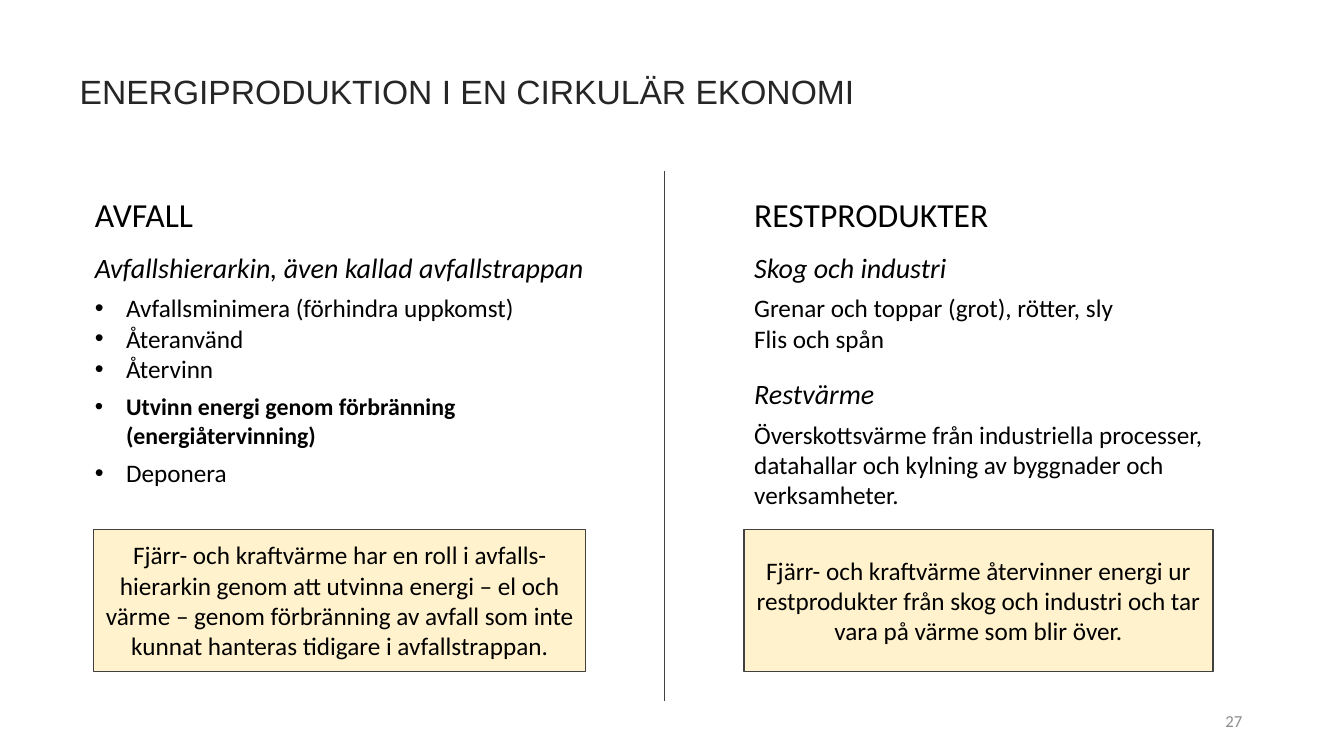
import pptx
import pptx.util
import pptx.dml.color
import pptx.enum.shapes
import pptx.enum.text
import pptx.oxml
import pptx.oxml.ns

Inches = pptx.util.Inches
Pt = pptx.util.Pt
RGBColor = pptx.dml.color.RGBColor
Align = pptx.enum.text.PP_ALIGN
Anchor = pptx.enum.text.MSO_ANCHOR

BLACK = RGBColor(0, 0, 0)
DARK = RGBColor(0x26, 0x26, 0x26)
EDGE = RGBColor(0x40, 0x40, 0x40)
GRAY = RGBColor(0x8C, 0x8C, 0x8C)
CREAM = RGBColor(0xFF, 0xF2, 0xCC)

# Text formats by level
HEAD = dict(size=24)
SUB = dict(size=20, italic=True, before=12)
ITEM = dict(bullet=True)

WASTE = [
    ("AVFALL", HEAD),
    ("Avfallshierarkin, även kallad avfallstrappan", SUB),
    ("Avfallsminimera (förhindra uppkomst)", dict(ITEM, before=6)),
    ("Återanvänd", ITEM),
    ("Återvinn", ITEM),
    ("Utvinn energi genom förbränning (energiåtervinning)",
     dict(ITEM, size=17, bold=True, before=6, after=6)),
    ("Deponera", ITEM),
]
REST = [
    ("RESTPRODUKTER", HEAD),
    ("Skog och industri", SUB),
    ("Grenar och toppar (grot), rötter, sly", dict(before=6)),
    ("Flis och spån", {}),
    ("Restvärme", dict(SUB, before=17)),
    ("Överskottsvärme från industriella processer, datahallar och kylning "
     "av byggnader och verksamheter.", dict(before=6)),
]
WASTE_NOTE = ("Fjärr- och kraftvärme har en roll i avfalls-hierarkin genom att "
              "utvinna energi – el och värme – genom förbränning av avfall som "
              "inte kunnat hanteras tidigare i avfallstrappan.")
REST_NOTE = ("Fjärr- och kraftvärme återvinner energi ur restprodukter från "
             "skog och industri och tar vara på värme som blir över.")


def add_xml(parent, tag, **attrs):
    node = pptx.oxml.parse_xml(
        f'<a:{tag} {pptx.oxml.ns.nsdecls("a")}/>')
    for key, value in attrs.items():
        node.set(key, value)
    parent.append(node)


def write(para, text, size=18, font="Calibri", color=BLACK, bold=False,
          italic=False, align=Align.LEFT, before=0, after=0, bullet=False):
    props = para._p.get_or_add_pPr()
    indent = Inches(0.31) if bullet else 0
    props.set("marL", str(indent))
    props.set("indent", str(-indent))
    if bullet:
        add_xml(props, "buFont", typeface="Arial")
        add_xml(props, "buChar", char="•")
    else:
        add_xml(props, "buNone")
    para.alignment = align
    para.space_before, para.space_after = Pt(before), Pt(after)
    run = para.add_run()
    run.text = text
    run.font.size, run.font.name = Pt(size), font
    run.font.bold, run.font.italic = bold, italic
    run.font.color.rgb = color


def place(shape, left, top, width, height, anchor=Anchor.MIDDLE):
    shape.left, shape.top = Inches(left), Inches(top)
    shape.width, shape.height = Inches(width), Inches(height)
    frame = shape.text_frame
    frame.word_wrap = True
    frame.auto_size = pptx.enum.text.MSO_AUTO_SIZE.NONE
    frame.vertical_anchor = anchor
    return frame


def add_title(slide, text):
    frame = place(slide.shapes.title, 0, 0.62, 13.33, 0.56)
    frame.margin_left = Inches(0.79)
    write(frame.paragraphs[0], text, size=24, font="Arial", color=DARK)


def fill_list(holder, rows, left, width, height):
    frame = place(holder, left, 1.87, width, height, Anchor.TOP)
    for i, (text, form) in enumerate(rows):
        para = frame.add_paragraph() if i else frame.paragraphs[0]
        write(para, text, **form)


def add_note(slide, text, left, width):
    box = slide.shapes.add_shape(
        pptx.enum.shapes.MSO_SHAPE.RECTANGLE, 0, 0, 0, 0)
    box.shadow.inherit = False
    box.fill.solid()
    box.fill.fore_color.rgb = CREAM
    box.line.color.rgb = EDGE
    box.line.width = Pt(1)
    frame = place(box, left, 5.25, width, 1.41)
    write(frame.paragraphs[0], text, align=Align.CENTER)


def add_rule(slide, x, top, bottom):
    rule = slide.shapes.add_connector(
        pptx.enum.shapes.MSO_CONNECTOR.STRAIGHT,
        Inches(x), Inches(top), Inches(x), Inches(bottom))
    rule.line.color.rgb = EDGE
    rule.line.width = Pt(0.5)
    add_xml(rule._element.spPr, "effectLst")


def add_number(slide, text):
    frame = place(slide.shapes.add_textbox(0, 0, 0, 0), 9.42, 6.95, 3, 0.4)
    write(frame.paragraphs[0], text, size=12, color=GRAY, align=Align.RIGHT)


def main():
    deck = pptx.Presentation()
    deck.slide_width, deck.slide_height = Inches(13.33), Inches(7.5)
    # Layout with a title and two lists
    slide = deck.slides.add_slide(deck.slide_layouts[3])
    add_title(slide, "ENERGIPRODUKTION I EN CIRKULÄR EKONOMI")
    add_rule(slide, 6.59, 1.7, 6.95)

    # Left column
    fill_list(slide.placeholders[1], WASTE, 0.84, 5.67, 3.06)
    add_note(slide, WASTE_NOTE, 0.93, 4.88)

    # Right column
    fill_list(slide.placeholders[2], REST, 7.38, 4.88, 3.33)
    add_note(slide, REST_NOTE, 7.38, 4.65)

    add_number(slide, "27")
    deck.save("out.pptx")


if __name__ == "__main__":
    main()
